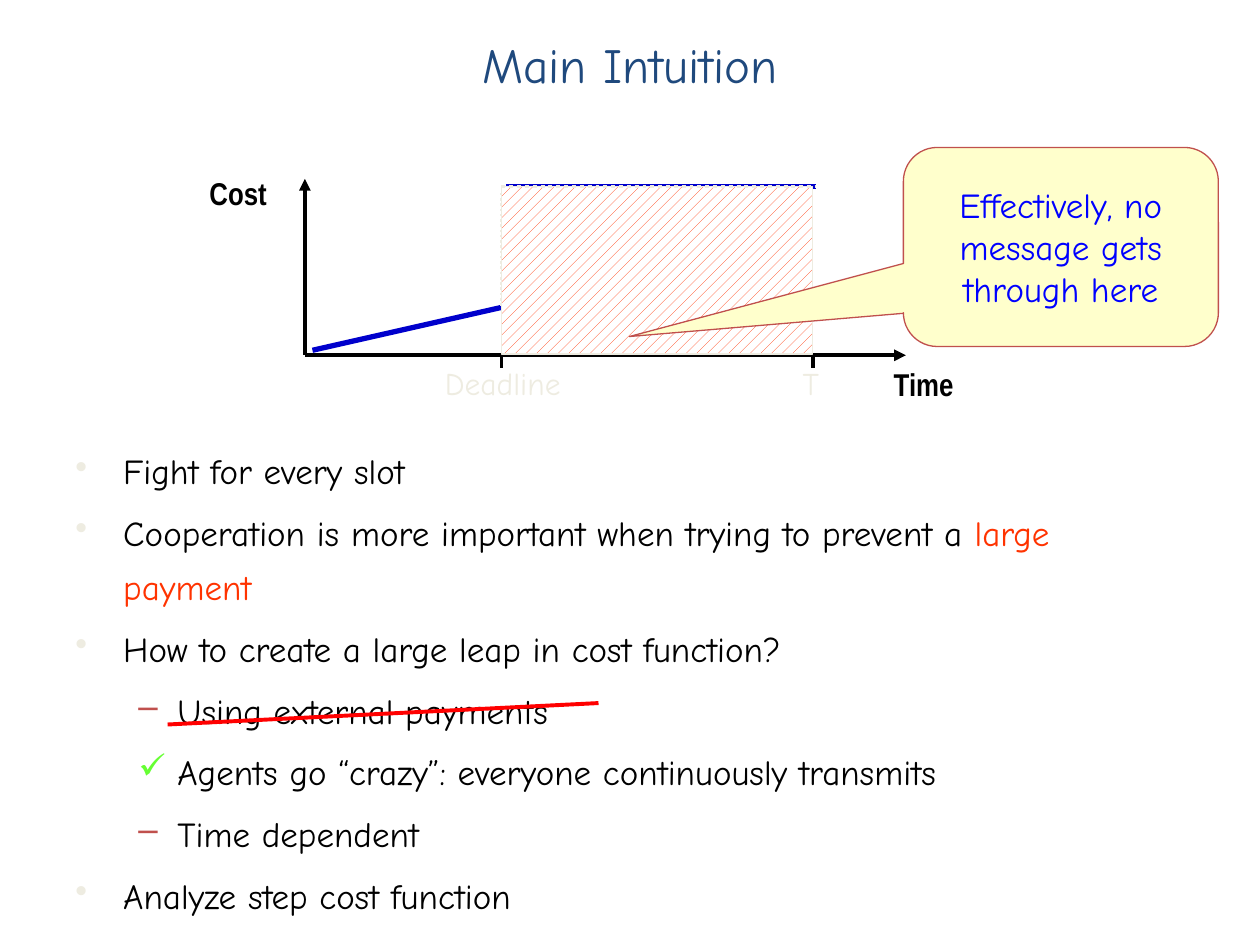
from pptx import Presentation
from pptx.dml.color import RGBColor
from pptx.enum.dml import MSO_LINE, MSO_PATTERN
from pptx.enum.shapes import MSO_CONNECTOR, MSO_SHAPE
from pptx.enum.text import MSO_ANCHOR, PP_ALIGN
from pptx.oxml.ns import qn
from pptx.util import Inches, Pt
from lxml import etree

DOT = MSO_LINE.ROUND_DOT
PCT = MSO_PATTERN.PERCENT_20
STRAIGHT = MSO_CONNECTOR.STRAIGHT
RECT = MSO_SHAPE.RECTANGLE
CALL = MSO_SHAPE.ROUNDED_RECTANGULAR_CALLOUT
MIDDLE, TOP = MSO_ANCHOR.MIDDLE, MSO_ANCHOR.TOP
CENTER, LEFT = PP_ALIGN.CENTER, PP_ALIGN.LEFT

THEME = {
    "font": "Comic Neue", "narrow": "Arial Narrow",
    "title": 28, "body": 20, "label": 18,
    "black": "000000", "white": "FFFFFF", "navy": "1F497D", "pale": "EEECE1",
    "cost": "0000CC", "blue": "0000FF", "hot": "FF3300", "red": "FF0000",
    "brick": "C0504D", "green": "66FF33", "cream": "FFFFCC",
}
TITLE = "Main Intuition"
NOTE = "Effectively, no message gets through here"
BULLETS = [
    (0, "•", "pale", [("Fight for every slot", "black")]),
    (0, "•", "pale", [("Cooperation is more important when trying to prevent a ", "black"),
                      ("large payment", "hot")]),
    (0, "•", "pale", [("How to create a large leap in cost function?", "black")]),
    (1, "–", "brick", [("Using external payments", "black")]),
    (1, "✓", "green", [("Agents go “crazy”: everyone continuously transmits", "black")]),
    (1, "–", "brick", [("Time dependent", "black")]),
    (0, "•", "pale", [("Analyze step cost function", "black")]),
]
INDENTS = [(0.38, 0.38), (0.81, 0.31)]
ZERO, DUE, END = 2.42, 3.98, 6.45
BASE, PEAK = 2.82, 1.48
AXES = [((ZERO, 1.42), (ZERO, BASE)), ((7.19, BASE), (ZERO, BASE))]
COSTS = [((2.48, 2.78), (DUE, 2.44)), ((DUE, 2.44), (5.48, 2.11))]
LABELS = [
    ("Cost", (1.56, 1.33, 0.66, 0.4), "narrow", "black", True),
    ("Time", (6.99, 2.85, 0.68, 0.4), "narrow", "black", True),
    ("Deadline", (3.39, 2.84, 1.2, 0.4), "font", "pale", False),
    ("T", (6.25, 2.84, 0.37, 0.4), "font", "pale", False),
]


def tint(name):
    return RGBColor.from_string(THEME[name])


def style(run, size, color, face="font", bold=False):
    font = run.font
    font.name, font.size, font.bold = THEME[face], Pt(THEME[size]), bold
    font.color.rgb = tint(color)


def write(shape, text, size, color, face="font", bold=False, wrap=True, anchor=MIDDLE):
    frame = shape.text_frame
    frame.text = text
    frame.word_wrap = wrap
    frame.vertical_anchor = anchor
    para = frame.paragraphs[0]
    para.alignment = CENTER
    style(para.runs[0], size, color, face, bold)


def add_box(slide, box):
    return slide.shapes.add_textbox(*map(Inches, box))


def add_line(slide, start, end, color, width, dash=None, arrow=False):
    line = slide.shapes.add_connector(STRAIGHT, *map(Inches, start + end))
    line.line.color.rgb = tint(color)
    line.line.width = Pt(width)
    if dash:
        line.line.dash_style = dash
    if arrow:
        etree.SubElement(line.line._get_or_add_ln(), qn("a:headEnd"), type="triangle")
    etree.SubElement(line._element.spPr, qn("a:effectLst"))


def add_shape(slide, kind, box, edge):
    shape = slide.shapes.add_shape(kind, *map(Inches, box))
    shape.shadow.inherit = False
    shape.line.color.rgb = tint(edge)
    shape.line.width = Pt(0.75)
    return shape


def add_list(slide, box):
    frame = add_box(slide, box).text_frame
    frame.word_wrap = True
    frame.vertical_anchor = TOP
    for i, (level, mark, color, parts) in enumerate(BULLETS):
        para = frame.add_paragraph() if i else frame.paragraphs[0]
        para.level, para.alignment = level, LEFT
        para.line_spacing, para.space_before = 1.3, Pt(4)
        props = para._p.get_or_add_pPr()
        left, hang = INDENTS[level]
        props.set("marL", str(Inches(left)))
        props.set("indent", str(-Inches(hang)))
        shade = etree.SubElement(props, qn("a:buClr"))
        etree.SubElement(shade, qn("a:srgbClr"), val=THEME[color])
        etree.SubElement(props, qn("a:buChar"), char=mark)
        for text, ink in parts:
            run = para.add_run()
            run.text = text
            style(run, "body", ink)


def add_graph(slide):
    for start, end in AXES:
        add_line(slide, start, end, "black", 2.25, arrow=True)
    for start, end in COSTS:
        add_line(slide, start, end, "cost", 3)
    add_line(slide, (DUE, 1.53), (DUE, 2.44), "pale", 1.5, DOT)
    add_line(slide, (4.02, PEAK), (6.48, PEAK), "cost", 3)
    zone = add_shape(slide, RECT, (DUE, PEAK, END - DUE, 1.33), "pale")
    zone.fill.patterned()
    zone.fill.pattern = PCT
    zone.fill.fore_color.rgb = tint("hot")
    zone.fill.back_color.rgb = tint("white")
    add_line(slide, (DUE, PEAK), (6.48, PEAK), "pale", 2.25, DOT)
    for text, box, face, color, bold in LABELS:
        write(add_box(slide, box), text, "label", color, face, bold, False, TOP)
    for x in (DUE, END):
        add_line(slide, (x, 2.83), (x, 2.92), "black", 2.25)


def add_note(slide):
    note = add_shape(slide, CALL, (7.17, 1.17, 2.5, 1.58), "brick")
    for i, value in enumerate((-1.37, 0.45, 0.17)):
        note.adjustments[i] = value
    note.fill.solid()
    note.fill.fore_color.rgb = tint("cream")
    write(note, NOTE, "body", "blue")


def main():
    """Build the slide on the cost of delay and save it."""
    deck = Presentation()
    deck.slide_width, deck.slide_height = Inches(10), Inches(7.5)
    slide = deck.slides.add_slide(deck.slide_layouts[6])
    add_list(slide, (0.5, 3.42, 9, 3.92))
    write(add_box(slide, (0.5, 0.17, 9, 0.67)), TITLE, "title", "navy")
    add_graph(slide)
    add_note(slide)
    add_line(slide, (1.33, 5.75), (4.75, 5.58), "red", 2.25)
    deck.save("out.pptx")


if __name__ == "__main__":
    main()
